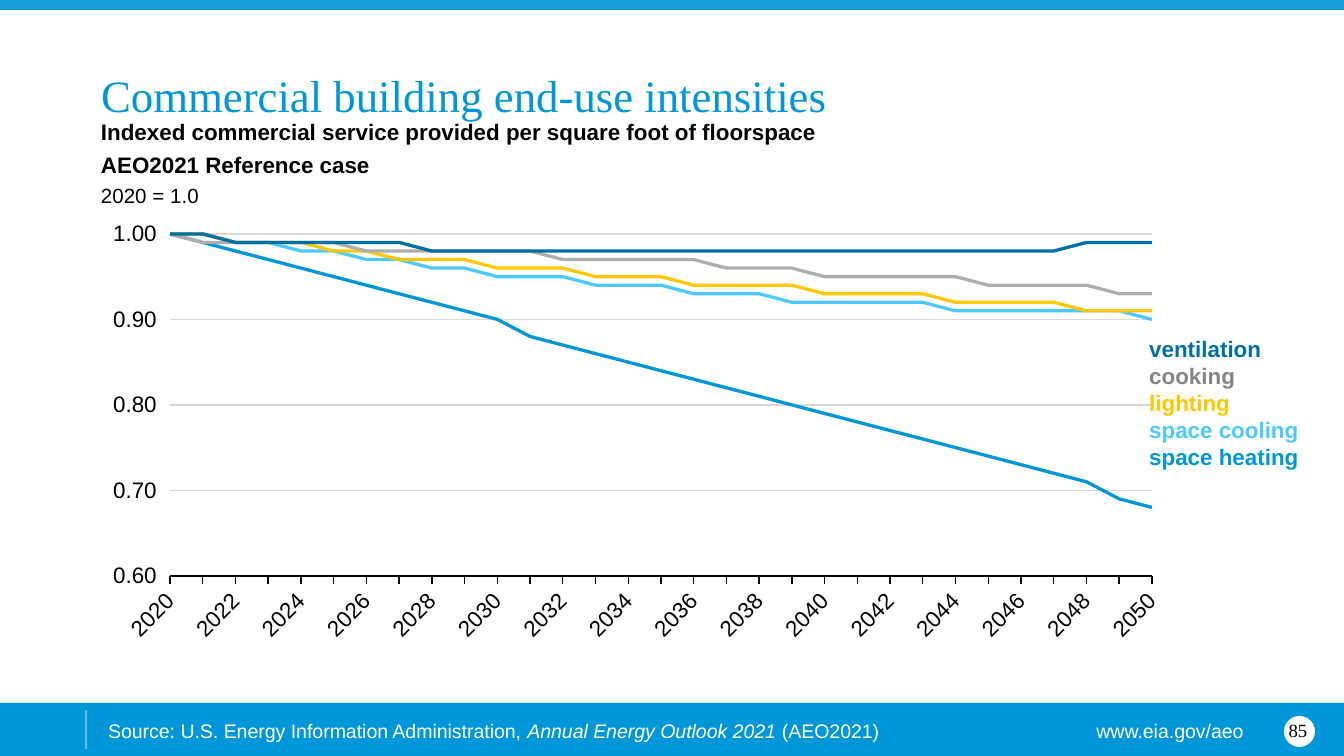
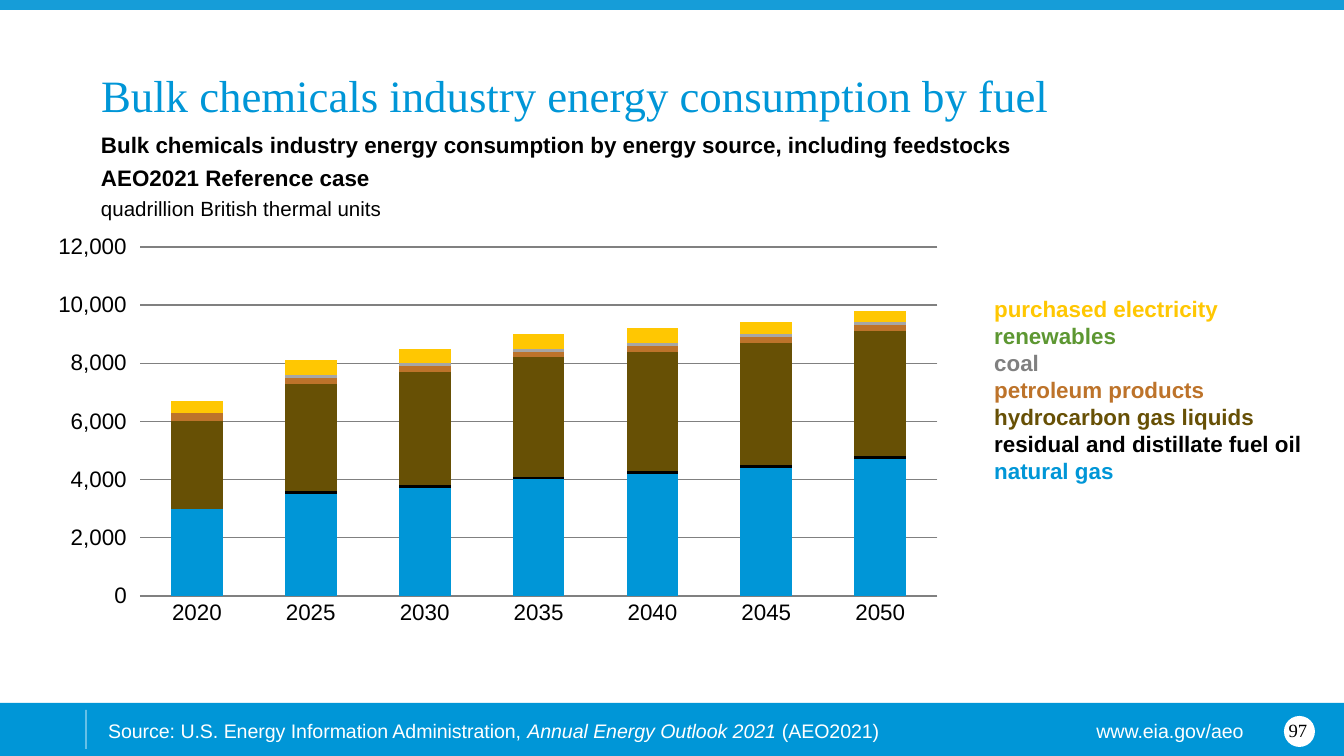
from pptx import Presentation
from pptx import util as u
from pptx.chart import data as cd
from pptx.dml.color import RGBColor
from pptx.enum import chart as ch, shapes as sh, text as tx
from pptx.oxml import parse_xml
from pptx.oxml.ns import nsdecls, qn

BLUE = RGBColor(0x00, 0x96, 0xD7)
TOP = RGBColor(0x16, 0x9D, 0xD8)
SKY = RGBColor(0x4E, 0xC9, 0xFF)
NAVY = RGBColor(0x00, 0x70, 0xA1)
GOLD = RGBColor(0xFF, 0xC7, 0x02)
GREEN = RGBColor(0x5D, 0x97, 0x32)
BROWN = RGBColor(0x67, 0x50, 0x05)
RUST = RGBColor(0xBD, 0x73, 0x2A)
SILVER = RGBColor(0xAD, 0xAD, 0xAD)
ASH = RGBColor(0xA6, 0xA6, 0xA6)
GRAY = RGBColor(0x85, 0x85, 0x85)
COAL = RGBColor(0x80, 0x80, 0x80)
PALE = RGBColor(0xD9, 0xD9, 0xD9)
BLACK = RGBColor(0x00, 0x00, 0x00)
WHITE = RGBColor(0xFF, 0xFF, 0xFF)

SANS, SERIF = "Arial", "Times New Roman"
WIDE, HIGH = 1344, 756
SCALE = 914400 / 134.4

# Content: boxes are (left, top, width, height) in px
SOURCE = [("Source: U.S. Energy Information Administration, ", False),
          ("Annual Energy Outlook 2021", True),
          (" (AEO2021)", False)]
SITE = "www.eia.gov/aeo"

PAGES = [
    dict(
        title="Commercial building end-use intensities",
        number="85",
        heads=["Indexed commercial service provided per square foot of floorspace",
               "AEO2021 Reference case"],
        unit="2020 = 1.0",
        body=(101, 148, 1141, 60),
        keys=[("ventilation", NAVY), ("cooking", GRAY), ("lighting", GOLD),
              ("space cooling", SKY), ("space heating", BLUE)],
        keybox=(1136, 329, 190, 149),
        kind=ch.XL_CHART_TYPE.LINE,
        box=(91, 214, 1091, 437),
        plot=(170, 234, 982, 342),
        cats=range(2020, 2051),
        low=0.6, high=1, step=0.1, form="#,##0.00",
        grid=PALE, base=BLACK,
        rows=[
            (BLUE, [1, .99, .98, .97, .96, .95, .94, .93, .92, .91, .9,
                    .88, .87, .86, .85, .84, .83, .82, .81, .8, .79,
                    .78, .77, .76, .75, .74, .73, .72, .71, .69, .68]),
            (SKY, [1, 1, .99, .99, .98, .98, .97, .97, .96, .96, .95,
                   .95, .95, .94, .94, .94, .93, .93, .93, .92, .92,
                   .92, .92, .92, .91, .91, .91, .91, .91, .91, .9]),
            (GOLD, [1, 1, .99, .99, .99, .98, .98, .97, .97, .97, .96,
                    .96, .96, .95, .95, .95, .94, .94, .94, .94, .93,
                    .93, .93, .93, .92, .92, .92, .92, .91, .91, .91]),
            (SILVER, [1, .99, .99, .99, .99, .99, .98, .98, .98, .98, .98,
                      .98, .97, .97, .97, .97, .97, .96, .96, .96, .95,
                      .95, .95, .95, .95, .94, .94, .94, .94, .93, .93]),
            (NAVY, [1, 1] + [.99] * 6 + [.98] * 20 + [.99] * 3),
        ],
    ),
    dict(
        title="Bulk chemicals industry energy consumption by fuel",
        number="97",
        heads=["Bulk chemicals industry energy consumption by energy source, "
               "including feedstocks", "AEO2021 Reference case"],
        unit="quadrillion British thermal units",
        body=(101, 161, 970, 60),
        keys=[("purchased electricity", GOLD), ("renewables", GREEN),
              ("coal", COAL), ("petroleum products", RUST),
              ("hydrocarbon gas liquids", BROWN),
              ("residual and distillate fuel oil", BLACK),
              ("natural gas", BLUE)],
        keybox=(981, 289, 336, 203),
        kind=ch.XL_CHART_TYPE.COLUMN_STACKED,
        box=(58, 231, 880, 423),
        plot=(140, 247, 798, 349),
        cats=range(2020, 2051, 5),
        low=0, high=12000, step=2000, form="#,##0",
        grid=COAL, base=COAL,
        rows=[
            (BLUE, [3000, 3500, 3700, 4000, 4200, 4400, 4700]),
            (BLACK, [0] * 7),
            (BLACK, [0] + [100] * 6),
            (BROWN, [3000, 3700, 3900, 4100, 4100, 4200, 4300]),
            (RUST, [300] + [200] * 6),
            (ASH, [0] + [100] * 6),
            (GREEN, [0] * 7),
            (GOLD, [400, 500, 500, 500, 500, 400, 400]),
        ],
    ),
]


def px(*vals):
    return [u.Emu(round(v * SCALE)) for v in vals]


def node(tag, **atts):
    pairs = " ".join(f'{k}="{v}"' for k, v in atts.items())
    return parse_xml(f"<{tag} {nsdecls(tag[0])} {pairs}/>")


def block(slide, kind, box, fill):
    part = slide.shapes.add_shape(kind, *px(*box))
    part.shadow.inherit = False
    part.fill.solid()
    part.fill.fore_color.rgb = fill
    part.line.fill.background()


def write(slide, box, paras, anchor=tx.MSO_ANCHOR.TOP, align=tx.PP_ALIGN.LEFT,
          inset=None, gap=0, grow=False):
    """Each paragraph is a list of (text, size, font, colour, bold, italic)."""
    frame = slide.shapes.add_textbox(*px(*box)).text_frame
    frame.word_wrap = True
    frame.vertical_anchor = anchor
    if grow:
        frame.auto_size = tx.MSO_AUTO_SIZE.SHAPE_TO_FIT_TEXT
    if inset is not None:
        frame.margin_left = frame.margin_top = frame.margin_bottom = 0
        frame.margin_right = px(inset)[0]
    for i, runs in enumerate(paras):
        para = frame.add_paragraph() if i else frame.paragraphs[0]
        para.alignment = align
        if i and gap:
            para.space_before = u.Pt(gap)
        for words, size, face, color, bold, slant in runs:
            run = para.add_run()
            run.text = words
            font = run.font
            font.size, font.name = u.Pt(size), face
            font.bold, font.italic = bold, slant
            font.color.rgb = color


def frame_up(slide, page):
    # Bands and footer
    block(slide, sh.MSO_SHAPE.RECTANGLE, (0, 703, WIDE, HIGH - 703), BLUE)
    block(slide, sh.MSO_SHAPE.RECTANGLE, (0, 0, WIDE, 10), TOP)
    write(slide, (95, 712, 895, 38),
          [[(t, 10.5, SANS, WHITE, False, i) for t, i in SOURCE]], grow=True)
    write(slide, (1039, 712, 218, 38),
          [[(SITE, 10.5, SANS, WHITE, False, False)]],
          align=tx.PP_ALIGN.RIGHT, grow=True)
    rule = slide.shapes.add_connector(sh.MSO_CONNECTOR.STRAIGHT,
                                      *px(86, 710, 86, 749))
    rule.line.width = u.Pt(1)
    rule.line.color.rgb = WHITE
    tint = next(rule.line._ln.iter(qn("a:srgbClr")))
    tint.append(node("a:alpha", val=40000))
    rule._element.spPr.append(node("a:effectLst"))
    # Page number
    block(slide, sh.MSO_SHAPE.OVAL, (1284, 716, 31, 31), WHITE)
    write(slide, (1270, 710, 56, 40),
          [[(page["number"], 10, SERIF, BLACK, False, False)]],
          anchor=tx.MSO_ANCHOR.MIDDLE, align=tx.PP_ALIGN.CENTER)
    # Title
    write(slide, (101, 9, 1176, 112),
          [[(page["title"], 24, SERIF, BLUE, False, False)]],
          anchor=tx.MSO_ANCHOR.BOTTOM, inset=0)


def place(chart, box, plot):
    """Pin the inner plot area, given in slide px."""
    x, y, w, h = box
    parts = dict(x=(plot[0] - x) / w, y=(plot[1] - y) / h,
                 w=plot[2] / w, h=plot[3] / h)
    lay = node("c:layout")
    man = node("c:manualLayout")
    lay.append(man)
    man.append(node("c:layoutTarget", val="inner"))
    for k in "xy":
        man.append(node(f"c:{k}Mode", val="edge"))
    for k, v in parts.items():
        man.append(node(f"c:{k}", val=round(v, 4)))
    area = chart._chartSpace.chart.plotArea
    for old in area.findall(qn("c:layout")):
        area.remove(old)
    area.insert(0, lay)


def style(axis):
    font = axis.tick_labels.font
    font.size, font.name = u.Pt(12), SANS
    font.color.rgb = BLACK
    axis.minor_tick_mark = ch.XL_TICK_MARK.NONE


def draw(slide, page):
    data = cd.CategoryChartData(number_format=page["form"])
    data.categories = [str(c) for c in page["cats"]]
    for n, (_, vals) in enumerate(page["rows"], 1):
        data.add_series(f"Series {n}", vals)
    chart = slide.shapes.add_chart(page["kind"], *px(*page["box"]), data).chart
    chart.has_legend = chart.has_title = False
    chart.font.size, chart.font.name = u.Pt(12), SANS
    chart.font.color.rgb = BLACK
    place(chart, page["box"], page["plot"])
    lines = page["kind"] == ch.XL_CHART_TYPE.LINE

    # Axes
    cat, val = chart.category_axis, chart.value_axis
    style(cat)
    style(val)
    cat.has_major_gridlines = False
    cat.format.line.color.rgb = page["base"]
    cat.format.line.width = u.Pt(0.75)
    cat.major_tick_mark = (ch.XL_TICK_MARK.OUTSIDE if lines
                           else ch.XL_TICK_MARK.NONE)
    val.minimum_scale, val.maximum_scale = page["low"], page["high"]
    val.major_unit = page["step"]
    val.major_tick_mark = ch.XL_TICK_MARK.NONE
    val.tick_label_position = ch.XL_TICK_LABEL_POSITION.LOW
    val.tick_labels.number_format = page["form"]
    val.tick_labels.number_format_is_linked = False
    val.format.line.fill.background()
    val.has_major_gridlines = True
    val.major_gridlines.format.line.color.rgb = page["grid"]
    val.major_gridlines.format.line.width = u.Pt(0.75)

    # Series
    plot = chart.plots[0]
    plot.vary_by_categories = False
    for row, (color, _) in zip(plot.series, page["rows"]):
        if lines:
            row.smooth = False
            row.marker.style = ch.XL_MARKER_STYLE.NONE
            row.format.line.color.rgb = color
            row.format.line.width = u.Pt(1.75)
        else:
            row.format.fill.solid()
            row.format.fill.fore_color.rgb = color
    if not lines:
        plot.gap_width, plot.overlap = 120, 100
        return

    # Lines start on the axis; every second year is labelled, at a slant
    for old in val._element.findall(qn("c:crossBetween")):
        val._element.remove(old)
    val._element.find(qn("c:crosses")).addnext(
        node("c:crossBetween", val="midCat"))
    offset = cat._element.find(qn("c:lblOffset"))
    offset.addnext(node("c:tickMarkSkip", val=1))
    offset.addnext(node("c:tickLblSkip", val=2))
    turn = cat._element.find(qn("c:txPr")).find(qn("a:bodyPr"))
    turn.set("rot", "-2700000")
    turn.set("vert", "horz")


def main():
    deck = Presentation()
    deck.slide_width, deck.slide_height = px(WIDE, HIGH)
    for page in PAGES:
        slide = deck.slides.add_slide(deck.slide_layouts[6])
        frame_up(slide, page)
        draw(slide, page)
        heads = [[(t, 12, SANS, BLACK, True, False)] for t in page["heads"]]
        unit = [(page["unit"], 11, SANS, BLACK, False, False)]
        write(slide, page["body"], heads + [unit],
              anchor=tx.MSO_ANCHOR.BOTTOM, inset=13, gap=3)
        write(slide, page["keybox"],
              [[(t, 12, SANS, c, True, False)] for t, c in page["keys"]],
              grow=True)
    deck.save("out.pptx")


if __name__ == "__main__":
    main()
